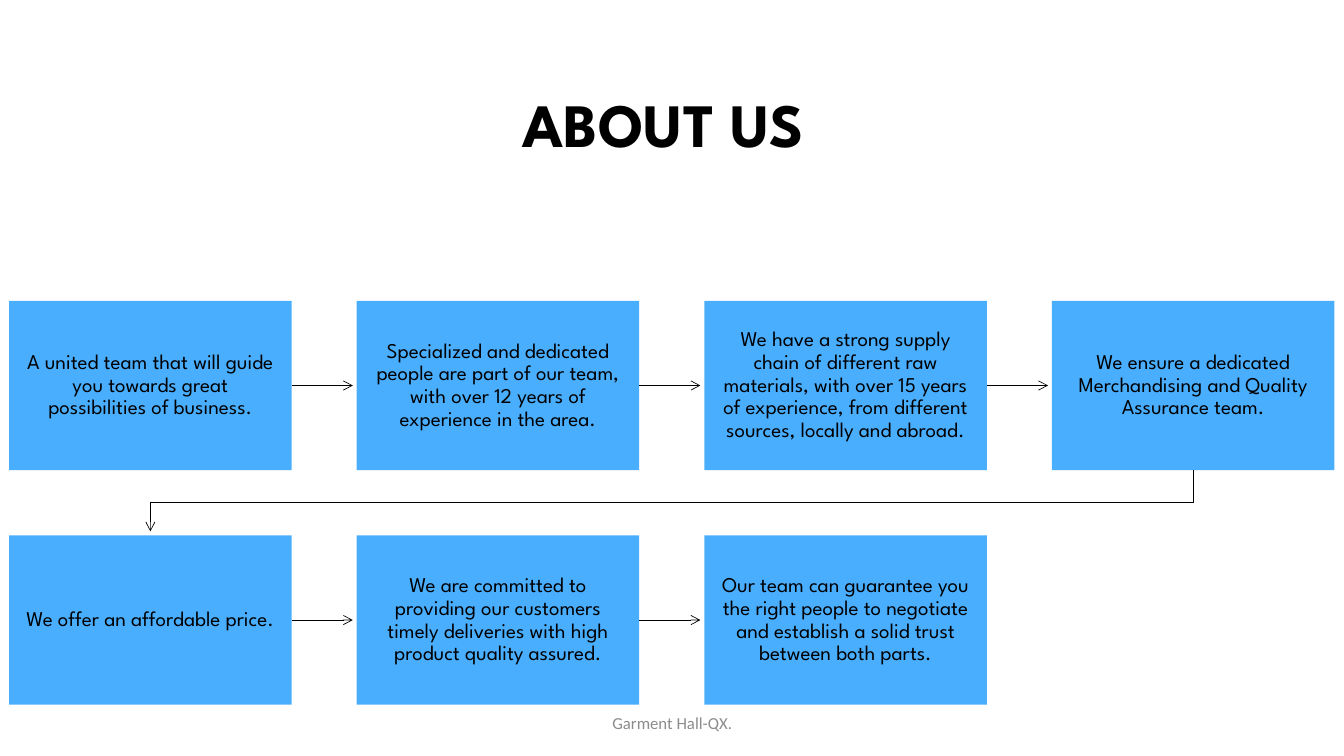
from lxml.etree import SubElement
from pptx import Presentation
from pptx.dml.color import RGBColor
from pptx.enum.shapes import MSO_CONNECTOR as Connector, MSO_SHAPE as Shape
from pptx.enum.text import MSO_ANCHOR as Anchor, PP_ALIGN as Align
from pptx.oxml.ns import qn
from pptx.util import Cm, Pt

BLACK = RGBColor(0x00, 0x00, 0x00)
BLUE = RGBColor(0x4A, 0xAE, 0xFF)
GRAY = RGBColor(0x8C, 0x8C, 0x8C)

COLUMNS = 4
LEFT, TOP = Cm(0.23), Cm(7.58)
WIDTH, HEIGHT = Cm(7.12), Cm(4.27)
COLUMN_STEP, ROW_STEP = Cm(8.76), Cm(5.91)
ARROW_GAP = Cm(0.1)

STEPS = [
    "A united team that will guide you towards great possibilities of business.",
    "Specialized and dedicated people are part of our team, with over 12 years of experience in the area.",
    "We have a strong supply chain of different raw materials, with over 15 years of experience, from different sources, locally and abroad.",
    "We ensure a dedicated Merchandising and Quality Assurance team.",
    "We offer an affordable price.",
    "We are committed to providing our customers timely deliveries with high product quality assured.",
    "Our team can guarantee you the right people to negotiate and establish a solid trust between both parts.",
]


def write_text(box, text, size, font="League Spartan", color=BLACK, bold=False, spacing=0.9, inset=Cm(0.25)):
    frame = box.text_frame
    frame.word_wrap = True
    frame.vertical_anchor = Anchor.MIDDLE
    frame.margin_left = frame.margin_right = inset
    para = frame.paragraphs[0]
    para.alignment = Align.CENTER
    para.line_spacing = spacing
    span = para.add_run()
    span.text = text
    span.font.name = font
    span.font.size = Pt(size)
    span.font.bold = bold
    span.font.color.rgb = color


def style_arrow(arrow):
    arrow.line.color.rgb = BLACK
    arrow.line.width = Pt(0.5)
    properties = arrow._element.spPr
    SubElement(properties.find(qn("a:ln")), qn("a:tailEnd"), type="arrow")
    SubElement(properties, qn("a:effectLst"))


deck = Presentation()
deck.slide_width, deck.slide_height = Cm(33.87), Cm(19.05)
page = deck.slides.add_slide(deck.slide_layouts[6])

title = page.shapes.add_textbox(Cm(2.67), Cm(0.89), Cm(28.52), Cm(4.65))
write_text(title, "ABOUT US ", 44, bold=True)

for index, step in enumerate(STEPS):
    row, column = divmod(index, COLUMNS)
    left = LEFT + column * COLUMN_STEP
    top = TOP + row * ROW_STEP
    box = page.shapes.add_shape(Shape.RECTANGLE, left, top, WIDTH, HEIGHT)
    box.shadow.inherit = False
    box.fill.solid()
    box.fill.fore_color.rgb = BLUE
    box.line.fill.background()
    write_text(box, step, 15, inset=Cm(0.36))

    if column < COLUMNS - 1 and index < len(STEPS) - 1:
        middle = top + HEIGHT // 2
        arrow = page.shapes.add_connector(
            Connector.STRAIGHT, left + WIDTH, middle, left + COLUMN_STEP - ARROW_GAP, middle)
        style_arrow(arrow)

first_center = LEFT + WIDTH // 2
last_center = first_center + (COLUMNS - 1) * COLUMN_STEP
row_bottom = TOP + HEIGHT
next_top = TOP + ROW_STEP
between = (row_bottom + next_top) // 2
outline = page.shapes.build_freeform(last_center, row_bottom)
outline.add_line_segments(
    [(last_center, between), (first_center, between), (first_center, next_top - ARROW_GAP)], close=False)
row_arrow = outline.convert_to_shape()
row_arrow.fill.background()
style_arrow(row_arrow)

footer = page.shapes.add_textbox(Cm(11.23), Cm(17.78), Cm(11.43), Cm(0.89))
write_text(footer, "Garment Hall-QX.", 12, font="Calibri", color=GRAY, spacing=1.0)

deck.save("out.pptx")
